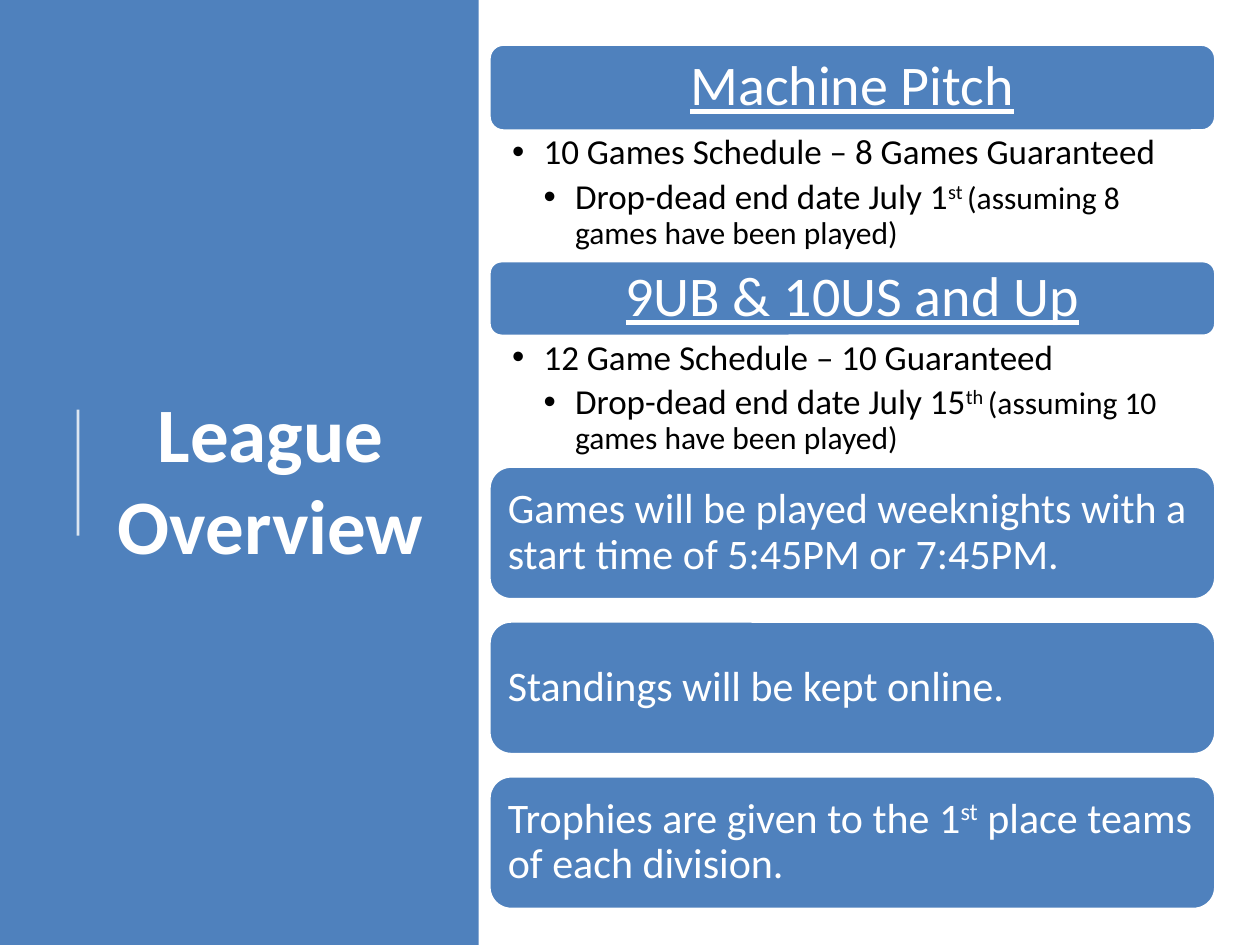
from dataclasses import dataclass
from typing import Any

from lxml import etree
from pptx import Presentation
from pptx import util as u
from pptx.dml import color
from pptx.enum import shapes, text
from pptx.oxml import ns

LEFT, WIDTH = 279.4, 415.4


def rgb(value):
    return color.RGBColor.from_string(value)


def add_run(p, content, size=24, fill="FFFFFF", font="Calibri", bold=False,
            underline=False, raised=False):
    r = p.add_run()
    r.text = content
    f = r.font
    f.name, f.size, f.bold, f.underline = font, u.Pt(size), bold, underline
    f.color.rgb = rgb(fill)
    if raised:
        r._r.get_or_add_rPr().set("baseline", "30000")


@dataclass
class Deck:
    """Holds the style and the current slide, and draws each kind of element."""
    s: Any
    accent: str = "4F81BD"
    light: str = "FFFFFF"
    dark: str = "000000"

    def frame(self, sp, insets, anchor=text.MSO_ANCHOR.MIDDLE):
        tf = sp.text_frame
        tf.word_wrap, tf.vertical_anchor = True, anchor
        tf.margin_left, tf.margin_top, tf.margin_right, tf.margin_bottom = map(u.Pt, insets)
        return tf

    def box(self, kind, x, y, w, h, line=None):
        sp = self.s.shapes.add_shape(kind, *map(u.Pt, (x, y, w, h)))
        sp.shadow.inherit = False
        sp.fill.solid()
        sp.fill.fore_color.rgb = rgb(self.accent)
        if line:
            sp.line.color.rgb = rgb(line)
            sp.line.width = u.Pt(2)
        else:
            sp.line.fill.background()
        return sp

    def rule(self, x, y1, y2):
        c = self.s.shapes.add_connector(shapes.MSO_CONNECTOR.STRAIGHT,
                                        *map(u.Pt, (x, y1, x, y2)))
        c.line.color.rgb = rgb(self.light)
        c.line.width = u.Pt(1.5)
        clr = c._element.spPr.find(".//" + ns.qn("a:srgbClr"))
        etree.SubElement(clr, ns.qn("a:alpha")).set("val", "80000")
        etree.SubElement(c._element.spPr, ns.qn("a:effectLst"))

    def title(self, content, x, y, w, h):
        sp = self.s.shapes.add_textbox(*map(u.Pt, (x, y, w, h)))
        p = self.frame(sp, (7.2, 3.6, 7.2, 3.6)).paragraphs[0]
        p.alignment = text.PP_ALIGN.CENTER
        add_run(p, content, size=44, fill=self.light, bold=True)

    def card(self, runs, y, h, inset, align=text.PP_ALIGN.LEFT, **fmt):
        sp = self.box(shapes.MSO_SHAPE.ROUNDED_RECTANGLE, LEFT, y, WIDTH, h, self.light)
        p = self.frame(sp, [inset] * 4).paragraphs[0]
        p.alignment, p.line_spacing = align, 0.9
        for content, raised in runs:
            add_run(p, content, fill=self.light, raised=raised, **fmt)

    def heading(self, content, y, h):
        self.card([(content, False)], y, h, 9.6, text.PP_ALIGN.CENTER,
                  size=32, underline=True)

    def bullets(self, items, y, h):
        sp = self.s.shapes.add_textbox(*map(u.Pt, (LEFT, y, WIDTH, h)))
        tf = self.frame(sp, (13.2, 2, 11.5, 2), text.MSO_ANCHOR.TOP)
        for level, runs in enumerate(items, 1):
            p = tf.paragraphs[0] if level == 1 else tf.add_paragraph()
            p.level, p.line_spacing, p.space_after = level, 0.9, u.Pt(4)
            pPr = p._p.get_or_add_pPr()
            pPr.set("marL", str(u.Pt(18 * level)))
            pPr.set("indent", str(u.Pt(-18)))
            etree.SubElement(pPr, ns.qn("a:buFont")).set("typeface", "Arial")
            etree.SubElement(pPr, ns.qn("a:buChar")).set("char", "•")
            for content, size, raised in runs:
                add_run(p, content, size=size, fill=self.dark, raised=raised)


def main():
    prs = Presentation()
    prs.slide_width, prs.slide_height = u.Pt(720), u.Pt(540)
    d = Deck(prs.slides.add_slide(prs.slide_layouts[6]))

    d.box(shapes.MSO_SHAPE.RECTANGLE, 0, 0, 273.6, 540)
    d.rule(44.6, 306, 234)
    d.title("League Overview", 55.4, 56.2, 198.7, 433.4)

    divisions = [
        ("Machine Pitch", 25.2, 49.7, "10 Games Schedule – 8 Games Guaranteed", "1", "st", 8),
        ("9UB & 10US and Up", 149, 43.2, "12 Game Schedule – 10 Guaranteed", "15", "th", 10),
    ]
    for name, y, h, schedule, day, suffix, games in divisions:
        d.heading(name, y, h)
        d.bullets([
            [(schedule, 20, False)],
            [(f"Drop-dead end date July {day}", 20, False),
             (f"{suffix} ", 20, True),
             (f"(assuming {games} games have been played)", 18, False)],
        ], y + h, 74.2)

    notes = [
        [("Games will be played weeknights with a start time of 5:45PM or 7:45PM.", False)],
        [("Standings will be kept online.", False)],
        [("Trophies are given to the 1", False), ("st", True),
         (" place teams of each division.", False)],
    ]
    for i, runs in enumerate(notes):
        d.card(runs, 266.4 + 88.5 * i, 76.3, 7.2)

    prs.save("out.pptx")


if __name__ == "__main__":
    main()
